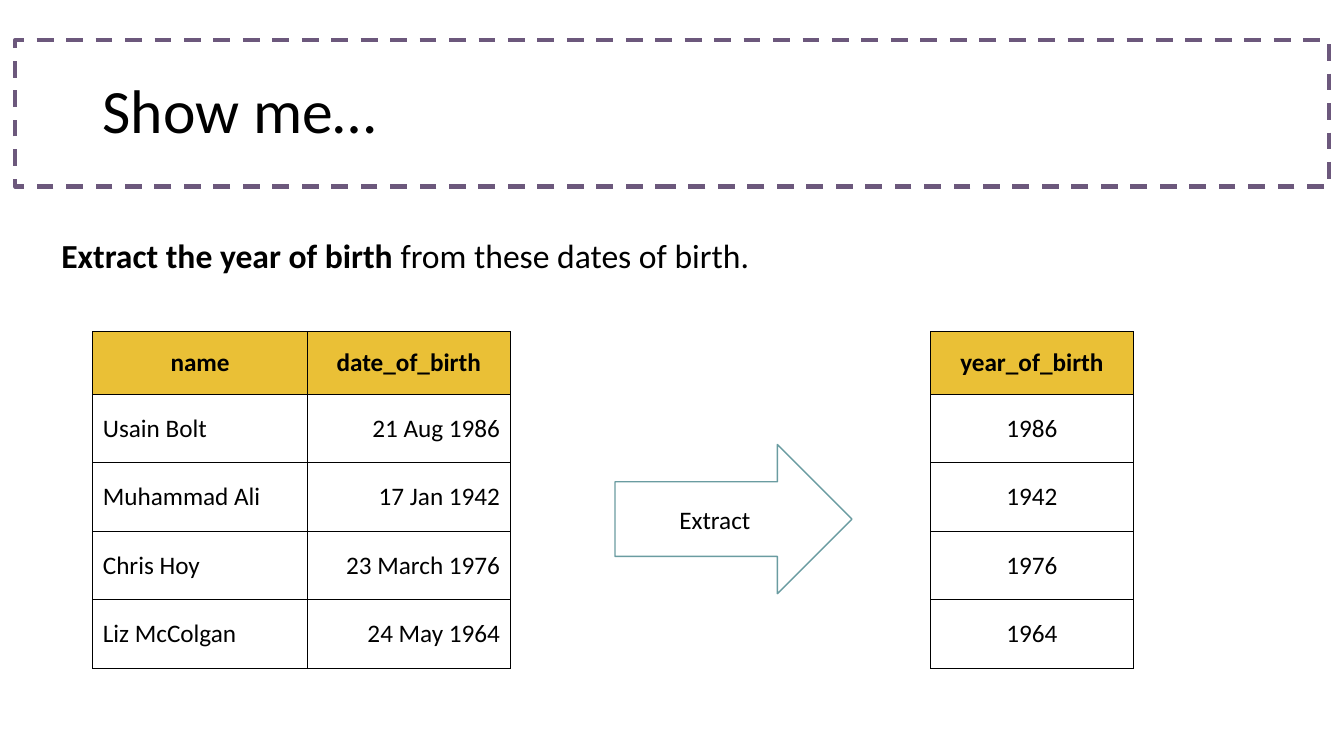
from dataclasses import dataclass

import pptx
import pptx.dml.color
import pptx.enum.dml
import pptx.enum.shapes
import pptx.enum.text
import pptx.oxml
import pptx.oxml.ns
import pptx.util

PX = 9144  # EMU per px, 100 px to the inch
FONT = "Calibri"
COLORS = {
    "ink": "000000",
    "paper": "FFFFFF",
    "frame": "6C587C",
    "header": "EAC036",
    "arrow": "6A9CA1",
}
HEADER_HEIGHT = 62
ROW_HEIGHT = 68
LEFT = pptx.enum.text.PP_ALIGN.LEFT
CENTER = pptx.enum.text.PP_ALIGN.CENTER
RIGHT = pptx.enum.text.PP_ALIGN.RIGHT
MIDDLE = pptx.enum.text.MSO_ANCHOR.MIDDLE
TOP = pptx.enum.text.MSO_ANCHOR.TOP


@dataclass(frozen=True)
class Box:
    left: int
    top: int
    width: int
    height: int

    def emu(self) -> tuple[int, int, int, int]:
        return self.left * PX, self.top * PX, self.width * PX, self.height * PX


@dataclass(frozen=True)
class Column:
    header: str
    width: int
    align: pptx.enum.text.PP_ALIGN
    values: tuple[str, ...]


@dataclass(frozen=True)
class DataTable:
    left: int
    top: int
    columns: tuple[Column, ...]


@dataclass(frozen=True)
class Run:
    text: str
    bold: bool = False


TABLES = (
    DataTable(92, 329, (
        Column("name", 213, LEFT,
               ("Usain Bolt", "Muhammad Ali", "Chris Hoy", "Liz McColgan")),
        Column("date_of_birth", 201, RIGHT,
               ("21 Aug 1986", "17 Jan 1942", "23 March 1976", "24 May 1964")),
    )),
    DataTable(923, 329, (
        Column("year_of_birth", 201, CENTER, ("1986", "1942", "1976", "1964")),
    )),
)


def rgb(name: str) -> pptx.dml.color.RGBColor:
    return pptx.dml.color.RGBColor.from_string(COLORS[name])


def write(text_frame, runs: tuple[Run, ...], size: int, align=LEFT) -> None:
    paragraph = text_frame.paragraphs[0]
    paragraph.alignment = align
    for item in runs:
        run = paragraph.add_run()
        run.text = item.text
        formats = {"name": FONT, "size": pptx.util.Pt(size), "bold": item.bold}
        for attribute, value in formats.items():
            setattr(run.font, attribute, value)
        run.font.color.rgb = rgb("ink")


def add_text(slide, box: Box, runs: tuple[Run, ...], size: int, anchor):
    shape = slide.shapes.add_textbox(*box.emu())
    shape.text_frame.word_wrap = True
    shape.text_frame.vertical_anchor = anchor
    write(shape.text_frame, runs, size)
    return shape


def add_outline(slide, kind, box: Box, color: str, weight: int):
    """Add an unfilled preset shape with a coloured line and no shadow."""
    shape = slide.shapes.add_shape(kind, *box.emu())
    shape.shadow.inherit = False
    shape.fill.background()
    shape.line.color.rgb = rgb(color)
    shape.line.width = pptx.util.Pt(weight)
    return shape


def add_borders(cell) -> None:
    properties = cell._tc.get_or_add_tcPr()
    for index, side in enumerate(("lnL", "lnR", "lnT", "lnB")):
        border = pptx.oxml.parse_xml(
            f'<a:{side} {pptx.oxml.ns.nsdecls("a")} w="{pptx.util.Pt(1)}">'
            f'<a:solidFill><a:srgbClr val="{COLORS["ink"]}"/></a:solidFill>'
            f'</a:{side}>')
        properties.insert(index, border)


def add_data_table(slide, data: DataTable) -> None:
    row_count = 1 + len(data.columns[0].values)
    width = sum(column.width for column in data.columns)
    height = HEADER_HEIGHT + ROW_HEIGHT * (row_count - 1)
    box = Box(data.left, data.top, width, height)
    table = slide.shapes.add_table(
        row_count, len(data.columns), *box.emu()).table
    table.first_row = False
    table.horz_banding = False
    for index, row in enumerate(table.rows):
        row.height = (ROW_HEIGHT if index else HEADER_HEIGHT) * PX
    for column_index, column in enumerate(data.columns):
        table.columns[column_index].width = column.width * PX
        for row_index, text in enumerate((column.header, *column.values)):
            is_header = row_index == 0
            cell = table.cell(row_index, column_index)
            cell.vertical_anchor = MIDDLE
            if is_header:
                cell.fill.solid()
                cell.fill.fore_color.rgb = rgb("header")
            else:
                cell.fill.background()
            add_borders(cell)
            write(cell.text_frame, (Run(text, is_header),), 18,
                  CENTER if is_header else column.align)


def main() -> None:
    presentation = pptx.Presentation()
    presentation.slide_width = 1333 * PX
    presentation.slide_height = 750 * PX
    slide = presentation.slides.add_slide(presentation.slide_layouts[6])

    frame = add_outline(slide, pptx.enum.shapes.MSO_SHAPE.RECTANGLE,
                        Box(15, 40, 1303, 145), "frame", 3)
    frame.line.dash_style = pptx.enum.dml.MSO_LINE.DASH
    title = add_text(slide, Box(92, 40, 1150, 145), (Run("Show me…"),), 44, MIDDLE)
    title.text_frame.paragraphs[0].line_spacing = 0.9
    add_text(slide, Box(51, 228, 1191, 50),
             (Run("Extract the year of birth ", True),
              Run("from these dates of birth.")), 24, TOP)

    for data in TABLES:
        add_data_table(slide, data)

    arrow = add_outline(slide, pptx.enum.shapes.MSO_SHAPE.RIGHT_ARROW,
                        Box(610, 441, 235, 148), "arrow", 1)
    arrow.fill.solid()
    arrow.fill.fore_color.rgb = rgb("paper")
    arrow.text_frame.vertical_anchor = MIDDLE
    write(arrow.text_frame, (Run("Extract"),), 18, CENTER)

    presentation.save("out.pptx")


if __name__ == "__main__":
    main()
